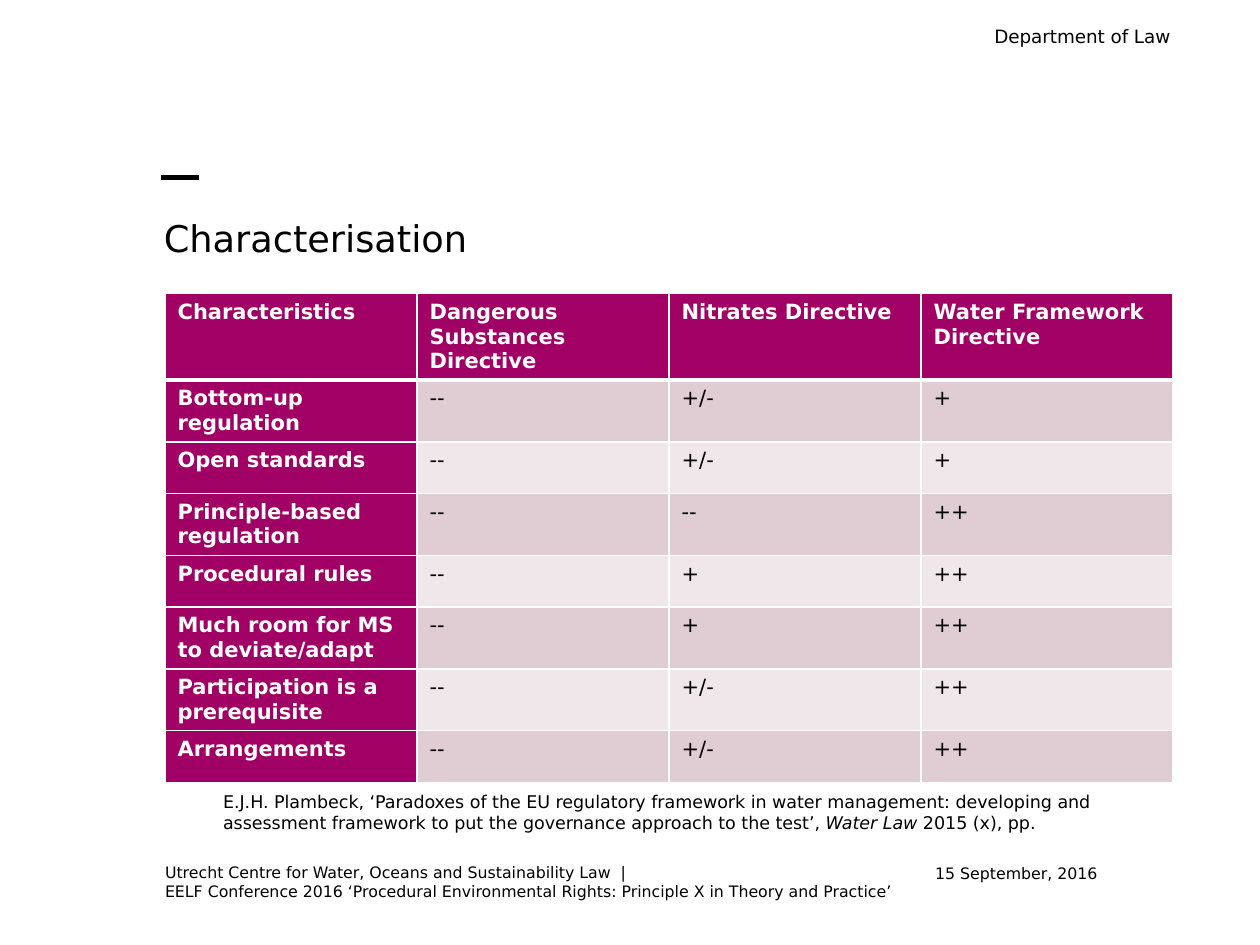
"""Build the slide that characterises three EU water directives in a table."""
from dataclasses import dataclass
from typing import NamedTuple

import lxml.etree
import pptx
import pptx.dml.color
import pptx.enum.shapes
import pptx.enum.text
import pptx.oxml.ns
import pptx.util

Inches = pptx.util.Inches
Pt = pptx.util.Pt
Align = pptx.enum.text.PP_ALIGN
Anchor = pptx.enum.text.MSO_ANCHOR
AutoSize = pptx.enum.text.MSO_AUTO_SIZE
qn = pptx.oxml.ns.qn


@dataclass(frozen=True)
class Theme:
    font: str = "DejaVu Sans"
    ink: str = "000000"
    paper: str = "FFFFFF"
    accent: str = "A10065"
    bands: tuple[str, str] = ("E0CCD3", "F0E7EA")
    title_size: float = 21
    table_size: float = 12
    department_size: float = 10.5
    citation_size: float = 10
    footer_size: float = 9
    dash_width: float = 3.25
    grid_width: float = 1
    header_rule_width: float = 3


class Span(NamedTuple):
    text: str
    italic: bool = False


class TextBlock(NamedTuple):
    left: float
    top: float
    width: float
    height: float
    size: float
    paragraphs: tuple[tuple[Span, ...], ...]
    align: Align = Align.LEFT
    anchor: Anchor = Anchor.TOP
    line_spacing: float = 1.0
    auto_size: AutoSize = AutoSize.NONE


class Characteristic(NamedTuple):
    name: str
    scores: tuple[str, str, str]


THEME = Theme()
TABLE_LEFT, TABLE_TOP = 1.31, 2.33
COLUMN_WIDTH, ROW_HEIGHT = 2.0, 0.41

HEADINGS = (
    "Characteristics",
    "Dangerous Substances Directive",
    "Nitrates Directive",
    "Water Framework Directive",
)
CHARACTERISTICS = (
    Characteristic("Bottom-up regulation", ("--", "+/-", "+")),
    Characteristic("Open standards", ("--", "+/-", "+")),
    Characteristic("Principle-based regulation", ("--", "--", "++")),
    Characteristic("Procedural rules", ("--", "+", "++")),
    Characteristic("Much room for MS to deviate/adapt", ("--", "+", "++")),
    Characteristic("Participation is a prerequisite", ("--", "+/-", "++")),
    Characteristic("Arrangements", ("--", "+/-", "++")),
)
TITLE = TextBlock(1.3, 1.71, 7.99, 0.5, THEME.title_size, ((Span("Characterisation"),),))
DEPARTMENT = TextBlock(
    5.43, 0.18, 3.86, 0.43, THEME.department_size,
    ((Span("Department of Law"),),), align=Align.RIGHT, line_spacing=1.1,
)
CITATION = TextBlock(
    1.77, 6.28, 7.52, 0.34, THEME.citation_size,
    ((
        Span(
            "E.J.H. Plambeck, ‘Paradoxes of the EU regulatory framework in water "
            "management: developing and assessment framework to put the governance "
            "approach to the test’, "
        ),
        Span("Water Law", italic=True),
        Span(" 2015 (x), pp."),
    ),),
    auto_size=AutoSize.SHAPE_TO_FIT_TEXT,
)
DATE = TextBlock(
    6.38, 6.73, 2.33, 0.4, THEME.footer_size,
    ((Span("15 September, 2016"),),), align=Align.RIGHT, anchor=Anchor.MIDDLE,
)
FOOTER = TextBlock(
    1.31, 6.85, 5.82, 0.4, THEME.footer_size,
    (
        (Span("Utrecht Centre for Water, Oceans and Sustainability Law  |"),),
        (Span("EELF Conference 2016 ‘Procedural Environmental Rights: "
              "Principle X in Theory and Practice’"),),
    ),
)


def rgb(value: str) -> pptx.dml.color.RGBColor:
    return pptx.dml.color.RGBColor.from_string(value)


def write(paragraph, text: str, *, size: float, color: str = THEME.ink,
          bold: bool = False, italic: bool = False) -> None:
    run = paragraph.add_run()
    run.text = text
    run.font.name = THEME.font
    run.font.size = Pt(size)
    run.font.bold = bold
    run.font.italic = italic
    run.font.color.rgb = rgb(color)


def draw_text(slide, block: TextBlock) -> None:
    box = slide.shapes.add_textbox(
        Inches(block.left), Inches(block.top), Inches(block.width), Inches(block.height))
    frame = box.text_frame
    frame.word_wrap = True
    frame.auto_size = block.auto_size
    frame.vertical_anchor = block.anchor
    frame.margin_left = frame.margin_right = frame.margin_top = frame.margin_bottom = 0
    for index, spans in enumerate(block.paragraphs):
        paragraph = frame.add_paragraph() if index else frame.paragraphs[0]
        paragraph.alignment = block.align
        paragraph.line_spacing = block.line_spacing
        for span in spans:
            write(paragraph, span.text, size=block.size, italic=span.italic)


def draw_dash(slide) -> None:
    dash = slide.shapes.add_connector(
        pptx.enum.shapes.MSO_CONNECTOR.STRAIGHT,
        Inches(1.28), Inches(1.41), Inches(1.58), Inches(1.41))
    dash.line.color.rgb = rgb(THEME.ink)
    dash.line.width = Pt(THEME.dash_width)
    lxml.etree.SubElement(dash._element.spPr, qn("a:effectLst"))


def set_borders(cell, top: float, bottom: float) -> None:
    properties = cell._tc.get_or_add_tcPr()
    widths = {"L": THEME.grid_width, "R": THEME.grid_width, "T": top, "B": bottom}
    for side, width in widths.items():
        border = lxml.etree.SubElement(properties, qn(f"a:ln{side}"), w=str(Pt(width)))
        fill = lxml.etree.SubElement(border, qn("a:solidFill"))
        lxml.etree.SubElement(fill, qn("a:srgbClr"), val=THEME.paper)


def draw_table(slide, headings: tuple[str, ...], rows: tuple[Characteristic, ...]) -> None:
    lines = [headings, *((row.name, *row.scores) for row in rows)]
    table = slide.shapes.add_table(
        len(lines), len(headings), Inches(TABLE_LEFT), Inches(TABLE_TOP),
        Inches(COLUMN_WIDTH * len(headings)), Inches(ROW_HEIGHT * len(lines))).table
    table.horz_banding = False
    table.first_col = True
    for column in table.columns:
        column.width = Inches(COLUMN_WIDTH)
    for row_index, line in enumerate(lines):
        table.rows[row_index].height = Inches(ROW_HEIGHT)
        top = THEME.header_rule_width if row_index == 1 else THEME.grid_width
        bottom = THEME.header_rule_width if row_index == 0 else THEME.grid_width
        for column_index, text in enumerate(line):
            heading = row_index == 0 or column_index == 0
            cell = table.cell(row_index, column_index)
            set_borders(cell, top, bottom)
            cell.fill.solid()
            cell.fill.fore_color.rgb = rgb(
                THEME.accent if heading else THEME.bands[(row_index - 1) % 2])
            write(cell.text_frame.paragraphs[0], text, size=THEME.table_size,
                  color=THEME.paper if heading else THEME.ink, bold=heading)


def main() -> None:
    deck = pptx.Presentation()
    deck.slide_width, deck.slide_height = Inches(10), Inches(7.5)
    slide = deck.slides.add_slide(deck.slide_layouts[6])
    draw_dash(slide)
    draw_text(slide, TITLE)
    draw_table(slide, HEADINGS, CHARACTERISTICS)
    for block in (DATE, DEPARTMENT, CITATION, FOOTER):
        draw_text(slide, block)
    deck.save("out.pptx")


if __name__ == "__main__":
    main()
